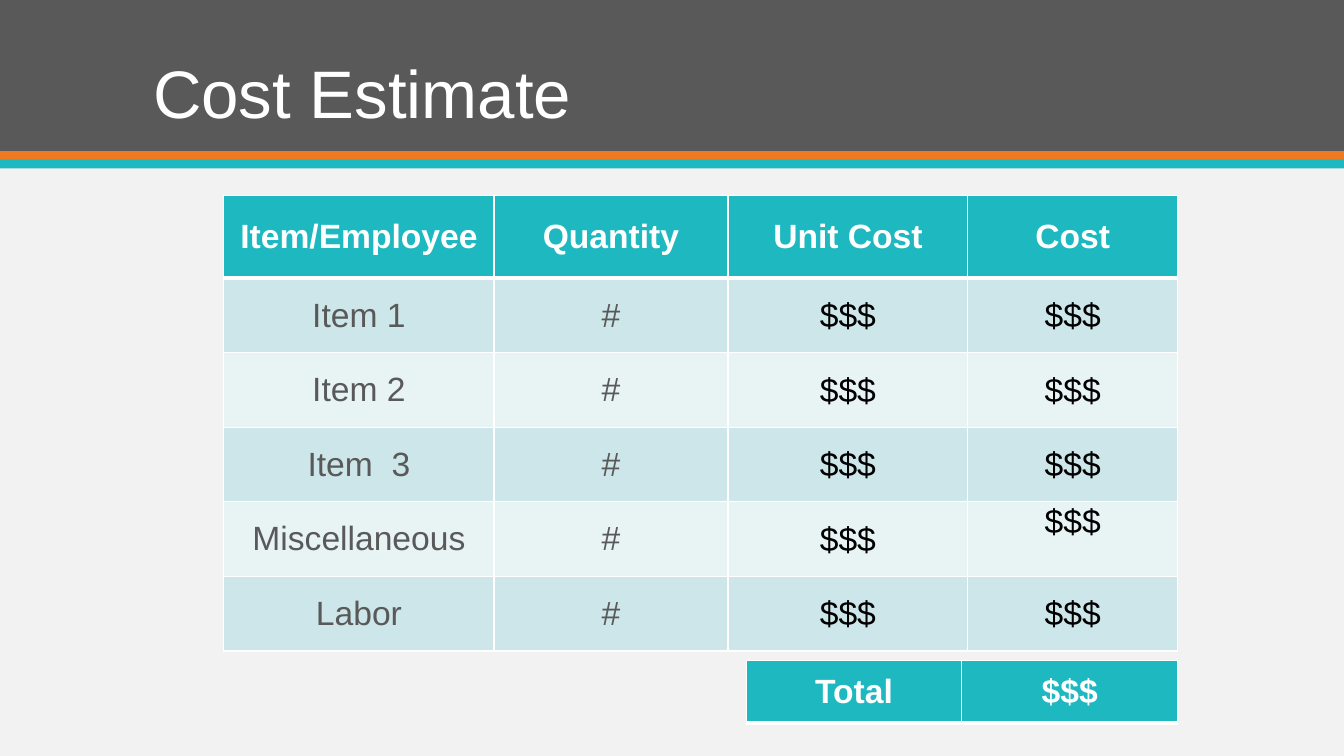
from dataclasses import dataclass

from lxml import etree
from pptx import Presentation
from pptx.dml.color import RGBColor
from pptx.enum.shapes import MSO_SHAPE
from pptx.enum.text import MSO_ANCHOR, PP_ALIGN
from pptx.oxml.ns import qn
from pptx.util import Inches, Pt

RECTANGLE = MSO_SHAPE.RECTANGLE
TOP, MIDDLE, BOTTOM = MSO_ANCHOR.TOP, MSO_ANCHOR.MIDDLE, MSO_ANCHOR.BOTTOM
CENTER = PP_ALIGN.CENTER


@dataclass(frozen=True)
class Theme:
    font: str = "Arial"
    title_size: int = 48
    table_size: int = 24
    background: str = "F2F2F2"
    gray: str = "595959"
    orange: str = "EF7920"
    teal: str = "1EB8C1"
    odd_row: str = "CDE6E9"
    even_row: str = "E8F3F4"
    white: str = "FFFFFF"
    black: str = "000000"


theme = Theme()


def add_run(paragraph, text, size, color, bold=False):
    run = paragraph.add_run()
    run.text = text
    run.font.name = theme.font
    run.font.size = Pt(size)
    run.font.bold = bold
    run.font.color.rgb = RGBColor.from_string(color)


def style_cell(cell, text, fill, color, bold=False, bottom_width=1):
    """Fill one table cell with centred text and white borders."""
    properties = cell._tc.get_or_add_tcPr()
    for side, width in (("L", 1), ("R", 1), ("T", 1), ("B", bottom_width)):
        border = etree.SubElement(properties, qn(f"a:ln{side}"), w=str(Pt(width)))
        border_fill = etree.SubElement(border, qn("a:solidFill"))
        etree.SubElement(border_fill, qn("a:srgbClr"), val=theme.white)
    cell.fill.solid()
    cell.fill.fore_color.rgb = RGBColor.from_string(fill)
    cell.vertical_anchor = MIDDLE
    paragraph = cell.text_frame.paragraphs[0]
    paragraph.alignment = CENTER
    add_run(paragraph, text, theme.table_size, color, bold)


presentation = Presentation()
presentation.slide_width = Inches(13.33)
presentation.slide_height = Inches(7.5)
slide = presentation.slides.add_slide(presentation.slide_layouts[6])
slide.background.fill.solid()
slide.background.fill.fore_color.rgb = RGBColor.from_string(theme.background)

# Header band, stripes and title
for top, height, color in (
    (0, 1.5, theme.gray),
    (1.5, 0.09, theme.orange),
    (1.58, 0.09, theme.teal),
):
    band = slide.shapes.add_shape(
        RECTANGLE, 0, Inches(top), presentation.slide_width, Inches(height)
    )
    band.shadow.inherit = False
    band.fill.solid()
    band.fill.fore_color.rgb = RGBColor.from_string(color)
    band.line.fill.background()

title = slide.shapes.add_textbox(Inches(1.42), Inches(0.24), Inches(10.5), Inches(1.13))
title.text_frame.word_wrap = True
title.text_frame.vertical_anchor = BOTTOM
title_line = title.text_frame.paragraphs[0]
title_line.line_spacing = 0.9
add_run(title_line, "Cost Estimate", theme.title_size, theme.white)

# Cost table
headings = ("Item/Employee", "Quantity", "Unit Cost", "Cost")
items = ("Item 1", "Item 2", "Item  3", "Miscellaneous", "Labor")
column_widths = (2.68, 2.32, 2.38, 2.08)
heading_height, item_height = 0.82, 0.74

costs = slide.shapes.add_table(
    len(items) + 1, len(headings), Inches(2.22), Inches(1.94),
    Inches(sum(column_widths)), Inches(heading_height + item_height * len(items)),
).table
for column, width in zip(costs.columns, column_widths):
    column.width = Inches(width)
for row in costs.rows:
    row.height = Inches(item_height)
costs.rows[0].height = Inches(heading_height)

for column_index, heading in enumerate(headings):
    style_cell(costs.cell(0, column_index), heading, theme.teal, theme.white,
               bold=True, bottom_width=3)

for row_index, item in enumerate(items, start=1):
    row_fill = theme.odd_row if row_index % 2 else theme.even_row
    for column_index, text in enumerate((item, "#", "$$$", "$$$")):
        is_money = column_index >= 2
        cell = costs.cell(row_index, column_index)
        style_cell(cell, text, row_fill, theme.black if is_money else theme.gray)
        if is_money:
            cell.margin_left = cell.margin_right = cell.margin_top = Inches(0.01)
            cell.margin_bottom = 0

miscellaneous_cost = costs.cell(items.index("Miscellaneous") + 1, 3)
miscellaneous_cost.vertical_anchor = TOP

# Total
total = slide.shapes.add_table(
    1, 2, Inches(7.4), Inches(6.55), Inches(4.28), Inches(0.6)
).table
total.rows[0].height = Inches(0.62)
for column_index, text in enumerate(("Total", "$$$")):
    style_cell(total.cell(0, column_index), text, theme.teal, theme.white,
               bold=True, bottom_width=3)

presentation.save("out.pptx")
